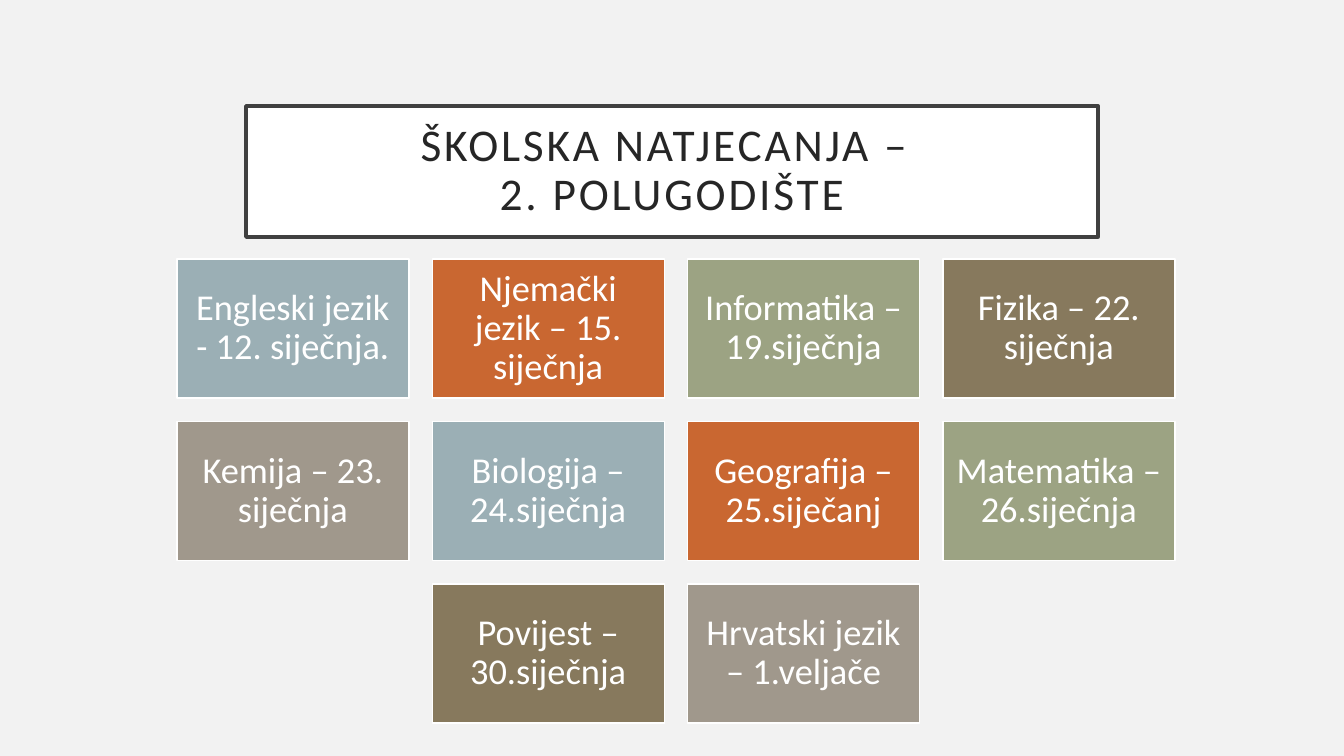
from copy import deepcopy

from pptx import Presentation
from pptx import util as u
from pptx.dml.color import RGBColor
from pptx.enum import shapes, text
from pptx.oxml.ns import qn

EMU_PER_INCH = 914400
PX_PER_INCH = 100.8
SLIDE_SIZE = (1344, 756)
TITLE_BOX = (246, 106, 852, 131)
CARDS_BOX = (177, 259, 998, 464)
CARD_SIZE = (232, 139)
COLUMNS = 4

FONT = "Calibri"
BACKGROUND = "F2F2F2"
WHITE = "FFFFFF"
TITLE_LINE = "404040"
TITLE_TEXT = "262626"
CARD_FILLS = ["9BAFB5", "C96731", "9CA383", "87795D", "A0988C"]

TITLE = "ŠKOLSKA NATJECANJA – \v2. POLUGODIŠTE"
COMPETITIONS = [
    "Engleski jezik - 12. siječnja.",
    "Njemački jezik – 15. siječnja",
    "Informatika – 19.siječnja",
    "Fizika – 22. siječnja",
    "Kemija – 23. siječnja",
    "Biologija – 24.siječnja",
    "Geografija – 25.siječanj",
    "Matematika – 26.siječnja",
    "Povijest – 30.siječnja",
    "Hrvatski jezik – 1.veljače",
]


def px(length):
    return u.Emu(round(length * EMU_PER_INCH / PX_PER_INCH))


def paint(color_format, color):
    color_format.rgb = RGBColor.from_string(color)


def style_box(shape, fill, line, line_width):
    shape.fill.solid()
    paint(shape.fill.fore_color, fill)
    paint(shape.line.color, line)
    shape.line.width = u.Pt(line_width)
    shape.shadow.inherit = False


def write(shape, content, size, color, inset, spacing=0):
    frame = shape.text_frame
    frame.word_wrap = True
    frame.auto_size = text.MSO_AUTO_SIZE.NONE
    frame.vertical_anchor = text.MSO_ANCHOR.MIDDLE
    frame.margin_left = frame.margin_right = px(inset)
    frame.margin_top = frame.margin_bottom = px(inset)
    paragraph = frame.paragraphs[0]
    paragraph.text = content
    paragraph.alignment = text.PP_ALIGN.CENTER
    paragraph.line_spacing = 0.9
    for run in paragraph.runs:
        run.font.name = FONT
        run.font.size = u.Pt(size)
        paint(run.font.fill.fore_color if run.font.fill.type else run.font.color, color)
        run.font._element.set("spc", str(spacing * 100))
    for line_break in paragraph._p.findall(qn("a:br")):
        line_break.append(deepcopy(paragraph.runs[0].font._element))


def add_title(slide, box):
    title = slide.shapes.title
    title.left, title.top, title.width, title.height = map(px, box)
    style_box(title, WHITE, TITLE_LINE, 2.5)
    write(title, TITLE, size=32.4, color=TITLE_TEXT, inset=20, spacing=2)


def add_cards(slide, box):
    left, top, width, height = box
    card_width, card_height = CARD_SIZE
    rows = [COMPETITIONS[i:i + COLUMNS] for i in range(0, len(COMPETITIONS), COLUMNS)]
    step_x = (width - card_width) / (COLUMNS - 1)
    step_y = (height - card_height) / (len(rows) - 1)
    for row, names in enumerate(rows):
        indent = (COLUMNS - len(names)) * step_x / 2
        for column, name in enumerate(names):
            card = slide.shapes.add_shape(
                shapes.MSO_SHAPE.RECTANGLE,
                px(left + indent + column * step_x),
                px(top + row * step_y),
                px(card_width),
                px(card_height),
            )
            fill = CARD_FILLS[(row * COLUMNS + column) % len(CARD_FILLS)]
            style_box(card, fill, WHITE, 1)
            write(card, name, size=26, color=WHITE, inset=11)


def main():
    presentation = Presentation()
    presentation.slide_width, presentation.slide_height = map(px, SLIDE_SIZE)
    slide = presentation.slides.add_slide(presentation.slide_layouts[5])
    slide.background.fill.solid()
    paint(slide.background.fill.fore_color, BACKGROUND)
    add_title(slide, TITLE_BOX)
    add_cards(slide, CARDS_BOX)
    presentation.save("out.pptx")


if __name__ == "__main__":
    main()
